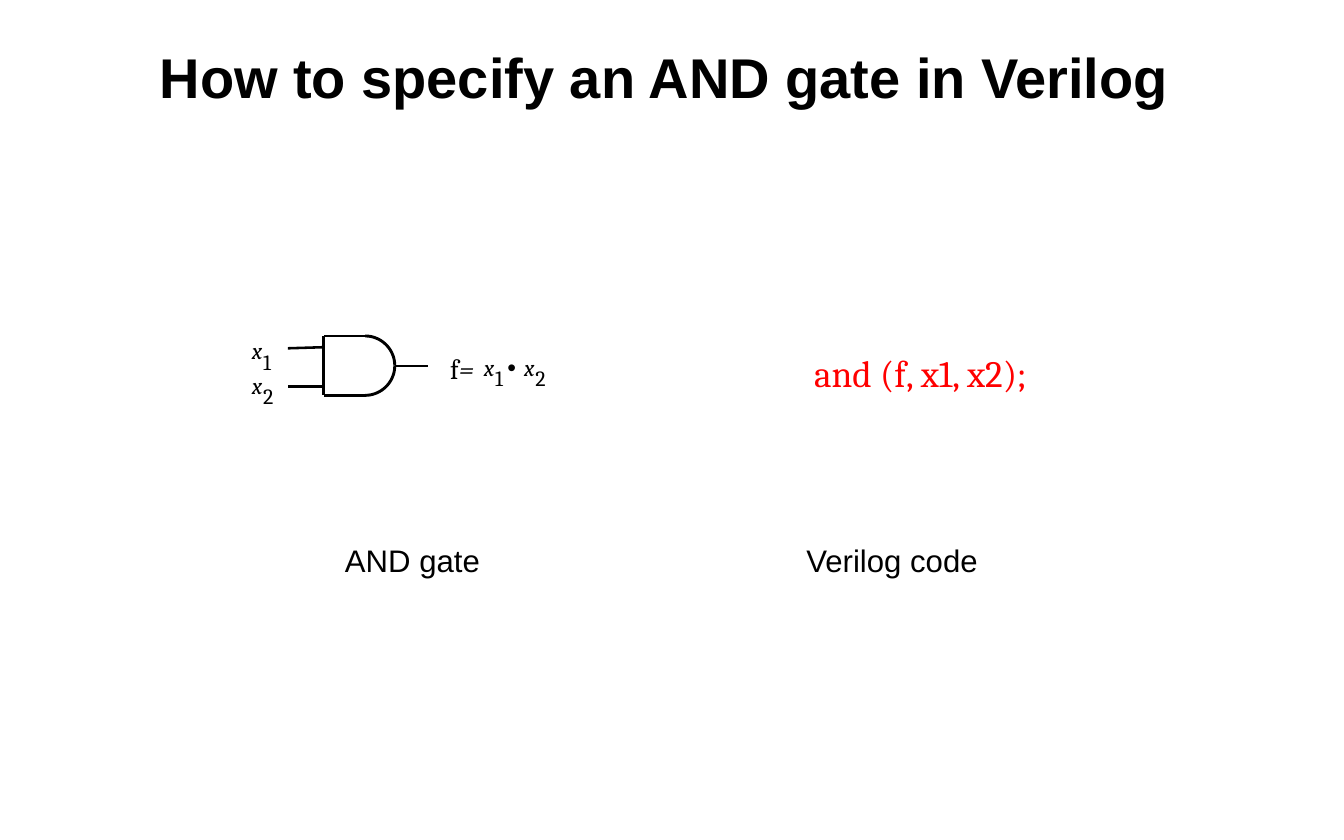
"""Build a slide that shows an AND gate beside its Verilog code."""
import math
from dataclasses import dataclass

import pptx
import pptx.dml.color
import pptx.enum.shapes
import pptx.enum.text
import pptx.oxml
import pptx.util

Inches = pptx.util.Inches
Pt = pptx.util.Pt
RGB = pptx.dml.color.RGBColor


@dataclass(frozen=True)
class Theme:
    ink: RGB = RGB(0x00, 0x00, 0x00)
    code: RGB = RGB(0xFF, 0x00, 0x00)
    sans: str = "Arial"
    serif: str = "Cambria"
    title: float = 36
    code_size: float = 24
    caption: float = 20
    output: float = 18
    dot: float = 16
    variable: float = 15
    index: float = 14
    pin_line: float = 1.63
    body_line: float = 1.88


THEME = Theme()


@dataclass(frozen=True)
class Run:
    text: str
    size: float
    font: str = THEME.serif
    color: RGB = THEME.ink
    bold: bool = False
    italic: bool = False


@dataclass(frozen=True)
class Label:
    left: float
    top: float
    width: float
    height: float
    runs: tuple[Run, ...]
    inset: bool = False
    title: bool = False


@dataclass(frozen=True)
class Variable:
    left: float
    top: float
    index: str


@dataclass(frozen=True)
class Wire:
    x1: float
    y1: float
    x2: float
    y2: float
    width: float = THEME.pin_line


@dataclass(frozen=True)
class Gate:
    left: float
    top: float
    bottom: float
    shoulder: float


LABELS = (
    Label(1, 0.33, 10, 0.75,
          (Run("How to specify an AND gate in Verilog ", THEME.title, THEME.sans, bold=True),),
          inset=True, title=True),
    Label(3.08, 4.83, 1.35, 0.34,
          (Run("AND gate ", THEME.caption, THEME.sans),)),
    Label(7.17, 3.08, 2.21, 0.51,
          (Run("and (f, x1, x2);", THEME.code_size, color=THEME.code),), inset=True),
    Label(7.2, 4.83, 1.54, 0.34,
          (Run("Verilog code", THEME.caption, THEME.sans),)),
    Label(4.02, 3.14, 0.29, 0.3,
          (Run("f", THEME.output), Run("=", THEME.output, italic=True))),
    Label(4.53, 3.14, 0.13, 0.27, (Run("•", THEME.dot, THEME.sans),)),
)
VARIABLES = (
    Variable(2.25, 3, "1"),
    Variable(2.25, 3.31, "2"),
    Variable(4.32, 3.15, "1"),
    Variable(4.68, 3.15, "2"),
)
GATE = Gate(2.89, 3, 3.53, 3.26)
PINS = (
    Wire(3.82, 3.27, 3.53, 3.27),
    Wire(2.89, 3.45, 2.57, 3.45),
    Wire(2.89, 3.1, 2.57, 3.11),
)


def add_label(s: pptx.slide.Slide, label: Label) -> None:
    """Add a text box run by run."""
    sp = s.shapes.add_textbox(Inches(label.left), Inches(label.top),
                              Inches(label.width), Inches(label.height))
    tf = sp.text_frame
    tf.word_wrap = label.title
    if not label.inset:
        tf.margin_left = tf.margin_right = tf.margin_top = tf.margin_bottom = 0
    p = tf.paragraphs[0]
    if label.title:
        p.alignment = pptx.enum.text.PP_ALIGN.CENTER
    for run in label.runs:
        r = p.add_run()
        r.text = run.text
        r.font.name = run.font
        r.font.size = Pt(run.size)
        r.font.bold = run.bold
        r.font.italic = run.italic
        r.font.color.rgb = run.color


def add_variable(s: pptx.slide.Slide, variable: Variable) -> None:
    """Add an italic x with its lowered index."""
    add_label(s, Label(variable.left, variable.top, 0.16, 0.25,
                       (Run("x", THEME.variable, italic=True),)))
    add_label(s, Label(variable.left + 0.1, variable.top + 0.11, 0.15, 0.24,
                       (Run(variable.index, THEME.index),)))


def add_wire(s: pptx.slide.Slide, wire: Wire) -> None:
    """Add a straight line without a shadow."""
    line = s.shapes.add_connector(pptx.enum.shapes.MSO_CONNECTOR.STRAIGHT,
                                  Inches(wire.x1), Inches(wire.y1),
                                  Inches(wire.x2), Inches(wire.y2))
    line.line.color.rgb = THEME.ink
    line.line.width = Pt(wire.width)
    line._element.spPr.append(pptx.oxml.parse_xml(
        '<a:effectLst xmlns:a="http://schemas.openxmlformats.org/drawingml/2006/main"/>'))


def add_quarter(s: pptx.slide.Slide, x: float, y: float, radius: float,
                side: int, steps: int = 24) -> None:
    """Add a quarter arc above (side -1) or below (side 1) the centre."""
    angles = [math.pi / 2 * (1 - i / steps) for i in range(steps + 1)]
    points = [(Inches(x + radius * math.cos(a)), Inches(y + side * radius * math.sin(a)))
              for a in angles]
    builder = s.shapes.build_freeform(*points[0])
    builder.add_line_segments(points[1:], close=False)
    sp = builder.convert_to_shape()
    sp.shadow.inherit = False
    sp.fill.background()
    sp.line.color.rgb = THEME.ink
    sp.line.width = Pt(THEME.body_line)


def add_gate(s: pptx.slide.Slide, gate: Gate) -> None:
    """Add the gate body: three straight sides and a half-round front."""
    edge = THEME.body_line
    add_wire(s, Wire(gate.shoulder, gate.top, gate.left, gate.top, edge))
    add_wire(s, Wire(gate.left, gate.top, gate.left, gate.bottom, edge))
    radius = (gate.bottom - gate.top) / 2
    for side in (-1, 1):
        add_quarter(s, gate.shoulder, gate.top + radius, radius, side)
    add_wire(s, Wire(gate.left, gate.bottom, gate.shoulder, gate.bottom, edge))


def main() -> None:
    """Draw the slide and save it."""
    prs = pptx.Presentation()
    prs.slide_width, prs.slide_height = Inches(12), Inches(7.5)
    s = prs.slides.add_slide(prs.slide_layouts[6])
    for label in LABELS:
        add_label(s, label)
    for pin in PINS:
        add_wire(s, pin)
    for variable in VARIABLES:
        add_variable(s, variable)
    add_gate(s, GATE)
    prs.save("out.pptx")


if __name__ == "__main__":
    main()
